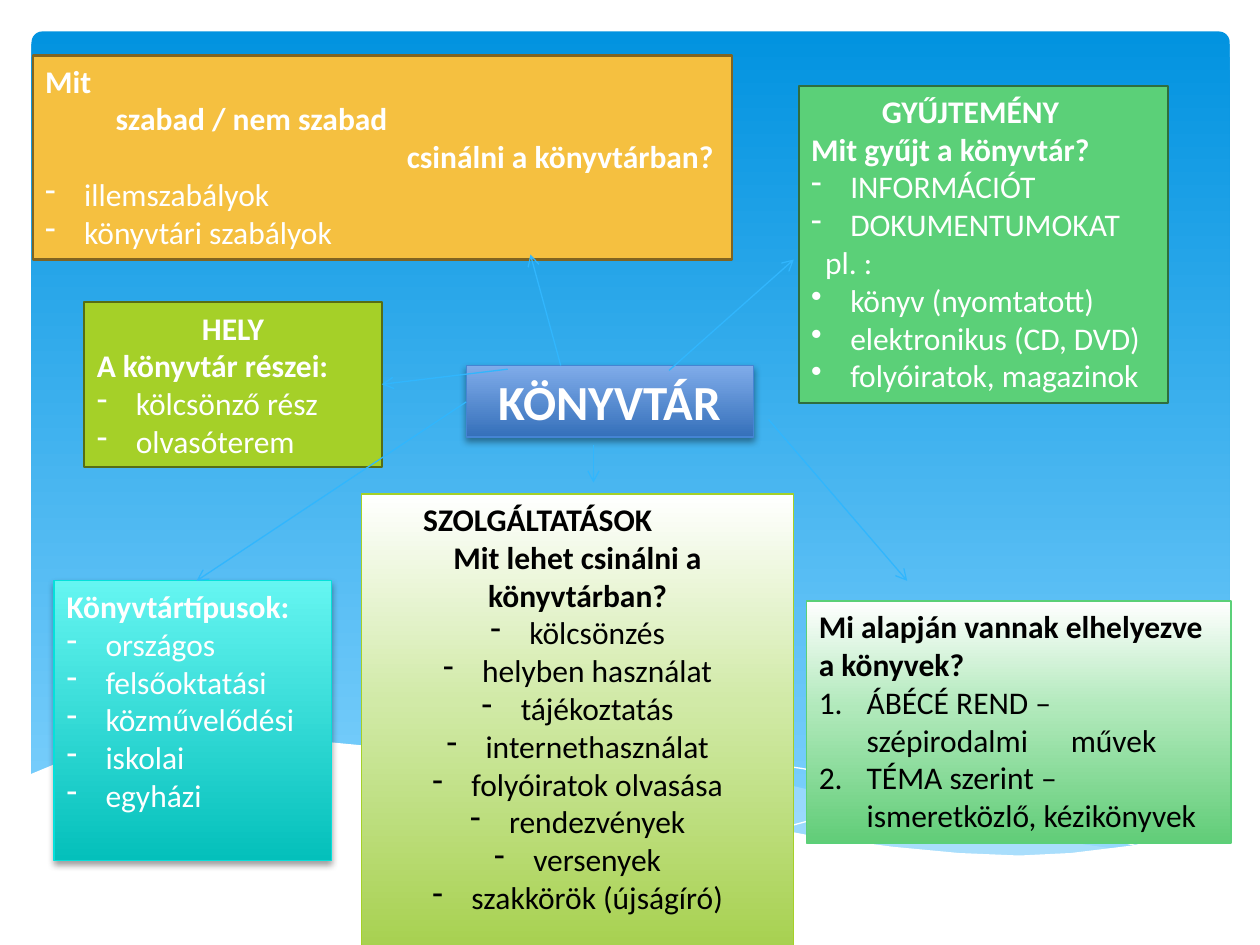
from dataclasses import dataclass
from typing import Optional

from lxml import etree
from pptx import Presentation
from pptx.dml.color import RGBColor
from pptx.enum.shapes import MSO_CONNECTOR, MSO_SHAPE
from pptx.enum.text import MSO_ANCHOR, PP_ALIGN
from pptx.oxml.ns import qn
from pptx.util import Inches, Pt

RECT, ROUNDED = MSO_SHAPE.RECTANGLE, MSO_SHAPE.ROUNDED_RECTANGLE
STRAIGHT, TOP = MSO_CONNECTOR.STRAIGHT, MSO_ANCHOR.TOP
LEFT, CENTER = PP_ALIGN.LEFT, PP_ALIGN.CENTER

WHITE = RGBColor(0xFF, 0xFF, 0xFF)
BLACK = RGBColor(0x00, 0x00, 0x00)
SKY = RGBColor(0x02, 0x93, 0xE0)
SKY_PALE = RGBColor(0x83, 0xD3, 0xFE)
MIST = RGBColor(0xC6, 0xE7, 0xFC)
ARROW = RGBColor(0x31, 0xB6, 0xFD)
BLUE_LIGHT = RGBColor(0x80, 0xAC, 0xEA)
BLUE_DARK = RGBColor(0x35, 0x70, 0xBA)
BLUE = RGBColor(0x45, 0x84, 0xD3)
LIME = RGBColor(0xA5, 0xD0, 0x28)
LIME_DARK = RGBColor(0x56, 0x6D, 0x15)
LIME_PALE = RGBColor(0xD1, 0xEA, 0xA7)
LIME_SOFT = RGBColor(0xA4, 0xCF, 0x4A)
AMBER = RGBColor(0xF5, 0xC0, 0x40)
AMBER_DARK = RGBColor(0x80, 0x64, 0x21)
GREEN = RGBColor(0x5B, 0xD0, 0x78)
GREEN_DARK = RGBColor(0x2F, 0x6D, 0x3F)
GREEN_PALE = RGBColor(0xB1, 0xE9, 0xBB)
GREEN_SOFT = RGBColor(0x61, 0xCD, 0x78)
AQUA_LIGHT = RGBColor(0x65, 0xF5, 0xF1)
AQUA_DARK = RGBColor(0x04, 0xC0, 0xBB)
AQUA = RGBColor(0x05, 0xE0, 0xDB)


@dataclass
class Para:
    text: str
    bold: bool = False
    align: PP_ALIGN = LEFT
    indent: float = 0
    bullet: str = ""
    tab: float = 0


@dataclass
class Box:
    at: tuple
    stops: list
    line: RGBColor
    paras: list
    weight: float = 0.75
    color: RGBColor = WHITE
    size: int = 18
    shadow: bool = False
    right: float = 0.1


@dataclass
class Wave:
    points: list
    fill: Optional[RGBColor] = None
    alpha: int = 100


def head(text: str, align: PP_ALIGN = LEFT, indent: float = 0) -> Para:
    return Para(text, True, align, indent)


def items(*texts: str, bullet: str = "-", align: PP_ALIGN = LEFT) -> list:
    return [Para(text, align=align, indent=0.31, bullet=bullet) for text in texts]


HUB = Box((3.7, 2.9, 2.28, 0.57), [(0, BLUE_LIGHT), (100, BLUE_DARK)], BLUE,
          [head("KÖNYVTÁR", CENTER)], size=28, shadow=True)
PLACE = Box((0.67, 2.4, 2.36, 1.31), [(0, LIME)], LIME_DARK,
            [head("HELY", CENTER), head("A könyvtár részei:"),
             *items("kölcsönző rész", "olvasóterem")], 1.25)
RULES = Box((0.26, 0.44, 5.55, 1.62), [(0, AMBER)], AMBER_DARK,
            [head("Mit"), head("szabad / nem szabad", indent=0.56),
             head("csinálni a könyvtárban?", indent=2.87),
             *items("illemszabályok", "könyvtári szabályok")], 1.25)
COLLECTION = Box((6.34, 0.68, 2.93, 2.52), [(0, GREEN)], GREEN_DARK,
                 [head("GYŰJTEMÉNY", indent=0.56), head("Mit gyűjt a könyvtár?"),
                  *items("INFORMÁCIÓT", "DOKUMENTUMOKAT"), Para("pl. :", indent=0.11),
                  *items("könyv (nyomtatott)", "elektronikus (CD, DVD)",
                         "folyóiratok, magazinok", bullet="•")], 1.25)
TYPES = Box((0.43, 4.61, 2.2, 2.22), [(0, AQUA_LIGHT), (100, AQUA_DARK)], AQUA,
            [head("Könyvtártípusok:"),
             *items("országos", "felsőoktatási", "közművelődési", "iskolai", "egyházi")],
            shadow=True)
ORDER = Box((6.4, 4.77, 3.37, 1.92), [(0, WHITE), (44, GREEN_PALE), (100, GREEN_SOFT)], GREEN,
            [head("Mi alapján vannak elhelyezve a könyvek?"),
             Para("ÁBÉCÉ REND – szépirodalmi\tművek", indent=0.38, bullet="1.", tab=2),
             Para("TÉMA szerint – ismeretközlő, kézikönyvek", indent=0.38, bullet="1.")],
            color=BLACK, right=0.15)
SERVICES = Box((2.87, 3.92, 3.43, 3.74), [(0, WHITE), (44, LIME_PALE), (100, LIME_SOFT)], LIME,
               [head("SZOLGÁLTATÁSOK", indent=0.39),
                head("Mit lehet csinálni a könyvtárban?", CENTER),
                *items("kölcsönzés", "helyben használat", "tájékoztatás", "internethasználat",
                       "folyóiratok olvasása", "rendezvények", "versenyek",
                       "szakkörök (újságíró)", align=CENTER)], color=BLACK)

ARROWS = [((4.45, 2.9), (4.21, 2.02)), ((5.31, 2.94), (6.3, 2.06)),
          ((4.03, 2.93), (3.03, 3.05)), ((3.7, 3.19), (1.56, 4.61)),
          ((6.1, 3.33), (7.2, 4.61))]
SERVICES_ARROW = ((4.71, 3.53), (4.71, 3.83))

WAVES = [
    Wave([(9.77, 6.01), (9.36, 6.09), (8.92, 6.18), (8.34, 6.32), (7.8, 6.44), (7.3, 6.55),
          (6.62, 6.67), (7.06, 6.73), (7.58, 6.78), (8.04, 6.8), (8.55, 6.78), (8.98, 6.72),
          (9.37, 6.63), (9.77, 6.49)], MIST, 29),
    Wave([(8.94, 6.75), (8.38, 6.67), (7.76, 6.56), (7.07, 6.42), (6.3, 6.24), (5.7, 6.1),
          (5.15, 6), (4.65, 5.93), (4.2, 5.89), (3.8, 5.87), (3.45, 5.88), (2.87, 5.93),
          (3.43, 6.01), (4.05, 6.13), (4.5, 6.24), (5.3, 6.42), (6.02, 6.57), (6.66, 6.68),
          (7.23, 6.76), (7.74, 6.79), (8.19, 6.8), (8.59, 6.79), (8.94, 6.75)], MIST, 40),
    Wave([(3.1, 5.97), (3.44, 5.92), (3.88, 5.89), (4.33, 5.89), (4.89, 5.92), (5.33, 5.96),
          (5.82, 6.02), (6.37, 6.1), (6.96, 6.21), (7.61, 6.35), (8.32, 6.52), (9.08, 6.73)]),
    Wave([(6.14, 6.59), (6.73, 6.43), (7.21, 6.31), (7.77, 6.18), (8.37, 6.06), (8.82, 5.98),
          (9.25, 5.92), (9.76, 5.87)]),
    Wave([(9.77, 6.48), (9.4, 6.61), (8.99, 6.71), (8.5, 6.77), (8.09, 6.79), (7.61, 6.77),
          (7.08, 6.72), (6.48, 6.64), (5.79, 6.51), (5.03, 6.35), (4.47, 6.22), (3.91, 6.09),
          (3.4, 5.99), (2.92, 5.92), (2.5, 5.88), (2.11, 5.86), (1.61, 5.86), (1.19, 5.89),
          (0.85, 5.95), (0.52, 6.03), (0.23, 6.15), (0.23, 7.31), (9.77, 7.31)], WHITE),
]


def add_xml(parent, tag: str, **attrs):
    return etree.SubElement(parent, qn(tag), {k: str(v) for k, v in attrs.items()})


def paint(sp, stops: list) -> None:
    if len(stops) == 1:
        sp.fill.solid()
        sp.fill.fore_color.rgb = stops[0][1]
        return
    sp.fill.gradient()
    sp.fill.gradient_angle = 270
    gs_list = sp._element.spPr.find(".//" + qn("a:gsLst"))
    for gs in list(gs_list):
        gs_list.remove(gs)
    for pos, color in stops:
        add_xml(add_xml(gs_list, "a:gs", pos=pos * 1000), "a:srgbClr", val=color)


def add_para(p, para: Para, fmt: dict) -> None:
    p.alignment = para.align
    pPr = p._p.get_or_add_pPr()
    if para.indent:
        pPr.set("marL", str(Inches(para.indent)))
        pPr.set("indent", str(-Inches(para.indent) if para.bullet else 0))
    if para.bullet == "1.":
        add_xml(pPr, "a:buFont", typeface="+mj-lt")
        add_xml(pPr, "a:buAutoNum", type="arabicPeriod")
    elif para.bullet:
        add_xml(pPr, "a:buChar", char=para.bullet)
    if para.tab:
        add_xml(add_xml(pPr, "a:tabLst"), "a:tab", pos=Inches(para.tab), algn="l")
    r = p.add_run()
    r.text = para.text
    for name, value in {**fmt, "bold": para.bold}.items():
        setattr(r.font, name, value)
    r.font.color.rgb = WHITE


def draw_box(shapes, box: Box) -> None:
    sp = shapes.add_shape(RECT, *map(Inches, box.at))
    sp.shadow.inherit = False
    paint(sp, box.stops)
    sp.line.color.rgb = box.line
    sp.line.width = Pt(box.weight)
    if box.shadow:
        effects = sp._element.spPr.find(qn("a:effectLst"))
        shadow = add_xml(effects, "a:outerShdw", blurRad=Pt(4), dist=Pt(2), dir=5400000)
        add_xml(add_xml(shadow, "a:srgbClr", val=BLACK), "a:alpha", val=38000)
    tf = sp.text_frame
    frame = {"word_wrap": True, "vertical_anchor": TOP, "margin_right": Inches(box.right)}
    for name, value in frame.items():
        setattr(tf, name, value)
    for i, para in enumerate(box.paras):
        p = tf.add_paragraph() if i else tf.paragraphs[0]
        add_para(p, para, {"name": "Calibri", "size": Pt(box.size)})
        p.runs[0].font.color.rgb = box.color


def draw_arrow(shapes, start: tuple, end: tuple) -> None:
    cx = shapes.add_connector(STRAIGHT, *map(Inches, start + end))
    cx.line.color.rgb = ARROW
    cx.line.width = Pt(0.75)
    add_xml(cx.line._get_or_add_ln(), "a:tailEnd", type="arrow")
    add_xml(cx._element.spPr, "a:effectLst")


def draw_wave(shapes, wave: Wave) -> None:
    points = [(Inches(x), Inches(y)) for x, y in wave.points]
    builder = shapes.build_freeform(*points[0])
    builder.add_line_segments(points[1:], close=wave.fill is not None)
    sp = builder.convert_to_shape()
    sp.shadow.inherit = False
    if wave.fill is None:
        sp.fill.background()
        sp.line.color.rgb = WHITE
        sp.line.width = Pt(0)
        return
    paint(sp, [(0, wave.fill)])
    sp.line.fill.background()
    if wave.alpha < 100:
        color = sp._element.spPr.find(qn("a:solidFill"))[0]
        add_xml(color, "a:alpha", val=wave.alpha * 1000)


def main() -> None:
    prs = Presentation()
    prs.slide_width, prs.slide_height = Inches(10), Inches(7.5)
    shapes = prs.slides.add_slide(prs.slide_layouts[6]).shapes
    panel = shapes.add_shape(ROUNDED, *map(Inches, (0.25, 0.25, 9.51, 6.6)))
    panel.adjustments[0] = 0.013
    panel.shadow.inherit = False
    paint(panel, [(0, SKY), (100, SKY_PALE)])
    panel.line.fill.background()
    for wave in WAVES:
        draw_wave(shapes, wave)
    for box in (HUB, PLACE, RULES, COLLECTION, TYPES, ORDER):
        draw_box(shapes, box)
    for start, end in ARROWS:
        draw_arrow(shapes, start, end)
    draw_box(shapes, SERVICES)
    draw_arrow(shapes, *SERVICES_ARROW)
    prs.save("out.pptx")


if __name__ == "__main__":
    main()
